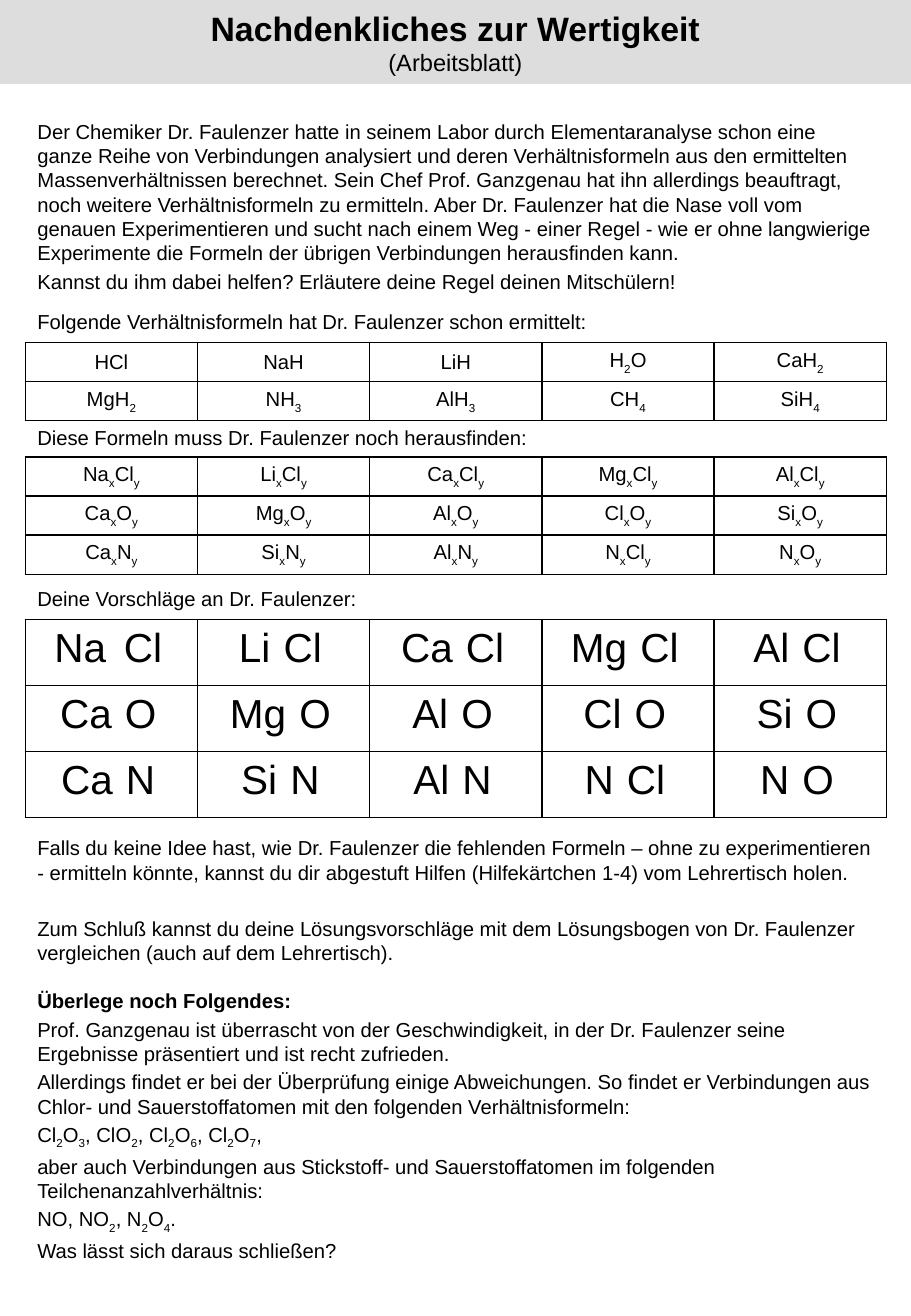
from dataclasses import dataclass

from lxml.etree import SubElement
from pptx import Presentation
from pptx.dml.color import RGBColor as Rgb
from pptx.enum.text import MSO_ANCHOR as Anchor, MSO_AUTO_SIZE as AutoSize, PP_ALIGN as Align
from pptx.oxml.ns import qn
from pptx.util import Pt


@dataclass(frozen=True)
class Theme:
    font: str = "Arial"
    ink: Rgb = Rgb(0, 0, 0)
    banner: Rgb = Rgb(0xDD, 0xDD, 0xDD)
    title: int = 20
    subtitle: int = 14
    text: int = 12
    blanks: int = 24


theme = Theme()
LEFT, WIDTH, COLUMNS = 15, 510.5, 5


def write(paragraph, text, size, bold=False, drop=-30):
    for position, part in enumerate(text.split("_")):
        if not part:
            continue
        run = paragraph.add_run()
        run.text = part
        run.font.name = theme.font
        run.font.size = Pt(size)
        run.font.bold = bold
        run.font.color.rgb = theme.ink
        if position % 2:
            run._r.get_or_add_rPr().set("baseline", str(drop * 1000))


def fill_frame(frame, lines, gaps={}, bold_lines=()):
    frame.word_wrap = True
    frame.auto_size = AutoSize.NONE
    frame.vertical_anchor = Anchor.TOP
    for number, line in enumerate(lines):
        paragraph = frame.add_paragraph() if number else frame.paragraphs[0]
        paragraph.alignment = Align.LEFT
        paragraph.space_before = Pt(gaps.get(number, 2.4))
        properties = paragraph._p.get_or_add_pPr()
        properties.set("marL", "0")
        properties.set("indent", "0")
        SubElement(properties, qn("a:buNone"))
        write(paragraph, line, theme.text, number in bold_lines, drop=-25)


presentation = Presentation()
presentation.slide_width = Pt(540)
presentation.slide_height = Pt(780)
worksheet = presentation.slides.add_slide(presentation.slide_layouts[1])

heading = worksheet.shapes.title
heading.left, heading.top, heading.width, heading.height = Pt(0), Pt(0), Pt(540), Pt(49.7)
heading.fill.solid()
heading.fill.fore_color.rgb = theme.banner
heading.text_frame.auto_size = AutoSize.NONE
heading.text_frame.vertical_anchor = Anchor.MIDDLE
heading_line = heading.text_frame.paragraphs[0]
heading_line.alignment = Align.CENTER
write(heading_line, "Nachdenkliches zur Wertigkeit", theme.title, bold=True)
heading_line.add_line_break()
write(heading_line, "(Arbeitsblatt)", theme.subtitle)

story = worksheet.placeholders[1]
story.left, story.top, story.width, story.height = Pt(LEFT), Pt(67), Pt(WIDTH), Pt(113)
fill_frame(story.text_frame, [
    "Der Chemiker Dr. Faulenzer hatte in seinem Labor durch Elementaranalyse schon eine ganze "
    "Reihe von Verbindungen analysiert und deren Verhältnisformeln aus den ermittelten "
    "Massenverhältnissen berechnet. Sein Chef Prof. Ganzgenau hat ihn allerdings beauftragt, "
    "noch weitere Verhältnisformeln zu ermitteln. Aber Dr. Faulenzer hat die Nase voll vom "
    "genauen Experimentieren und sucht nach einem Weg - einer Regel - wie er ohne langwierige "
    "Experimente die Formeln der übrigen Verbindungen herausfinden kann.",
    "Kannst du ihm dabei helfen? Erläutere deine Regel deinen Mitschülern!",
])

passages = [
    (180, 23, ["Folgende Verhältnisformeln hat Dr. Faulenzer schon ermittelt:"], {}, ()),
    (248.4, 23, ["Diese Formeln muss Dr. Faulenzer noch herausfinden:"], {}, ()),
    (344.2, 23, ["Deine Vorschläge an Dr. Faulenzer:"], {}, ()),
    (491.8, 90.7, [
        "Falls du keine Idee hast, wie Dr. Faulenzer die fehlenden Formeln – ohne zu "
        "experimentieren - ermitteln könnte, kannst du dir abgestuft Hilfen "
        "(Hilfekärtchen 1-4) vom Lehrertisch holen.",
        "Zum Schluß kannst du deine Lösungsvorschläge mit dem Lösungsbogen von Dr. Faulenzer "
        "vergleichen (auch auf dem Lehrertisch).",
    ], {1: 19}, ()),
    (582.5, 170, [
        "Überlege noch Folgendes:",
        "Prof. Ganzgenau ist überrascht von der Geschwindigkeit, in der Dr. Faulenzer seine "
        "Ergebnisse präsentiert und ist recht zufrieden.",
        "Allerdings findet er bei der Überprüfung einige Abweichungen. So findet er Verbindungen "
        "aus Chlor- und Sauerstoffatomen mit den folgenden Verhältnisformeln:",
        "Cl_2_O_3_, ClO_2_, Cl_2_O_6_, Cl_2_O_7_,",
        "aber auch Verbindungen aus Stickstoff- und Sauerstoffatomen im folgenden "
        "Teilchenanzahlverhältnis:",
        "NO, NO_2_, N_2_O_4_.",
        "Was lässt sich daraus schließen?",
    ], {}, (0,)),
]
for top, height, lines, gaps, bold_lines in passages:
    passage = worksheet.shapes.add_textbox(Pt(LEFT), Pt(top), Pt(WIDTH), Pt(height))
    fill_frame(passage.text_frame, lines, gaps, bold_lines)

known_formulas = [
    ["HCl", "NaH", "LiH", "H_2_O", "CaH_2"],
    ["MgH_2", "NH_3", "AlH_3", "CH_4", "SiH_4"],
]
element_pairs = [
    [("Na", "Cl"), ("Li", "Cl"), ("Ca", "Cl"), ("Mg", "Cl"), ("Al", "Cl")],
    [("Ca", "O"), ("Mg", "O"), ("Al", "O"), ("Cl", "O"), ("Si", "O")],
    [("Ca", "N"), ("Si", "N"), ("Al", "N"), ("N", "Cl"), ("N", "O")],
]
unknown_formulas = [[f"{a}_x_{b}_y" for a, b in pairs] for pairs in element_pairs]
answer_blanks = [[f"{a}_  _{b}_ " for a, b in pairs] for pairs in element_pairs]
answer_blanks[0][0] = "Na _ _Cl_ "

formula_grids = [
    (203, 21.6, theme.text, known_formulas),
    (270.9, 22.5, theme.text, unknown_formulas),
    (367.2, 36, theme.blanks, answer_blanks),
]
for top, row_height, size, formulas in formula_grids:
    grid = worksheet.shapes.add_table(
        len(formulas), COLUMNS, Pt(LEFT), Pt(top), Pt(WIDTH), Pt(row_height * len(formulas))
    ).table
    grid.first_row = grid.horz_banding = False
    for column in grid.columns:
        column.width = Pt(WIDTH / COLUMNS)
    for row, row_formulas in zip(grid.rows, formulas):
        row.height = Pt(row_height)
        for cell, formula in zip(row.cells, row_formulas):
            cell.vertical_anchor = Anchor.MIDDLE
            cell_properties = cell._tc.get_or_add_tcPr()
            for side in ("a:lnL", "a:lnR", "a:lnT", "a:lnB"):
                border = SubElement(cell_properties, qn(side), w=str(Pt(1)))
                ink = SubElement(border, qn("a:solidFill"))
                SubElement(ink, qn("a:srgbClr"), val=str(theme.ink))
            cell.fill.background()
            formula_line = cell.text_frame.paragraphs[0]
            formula_line.alignment = Align.CENTER
            indents = formula_line._p.get_or_add_pPr()
            indents.set("marL", str(Pt(27)))
            indents.set("indent", str(Pt(-27)))
            write(formula_line, formula, size)

presentation.save("out.pptx")
